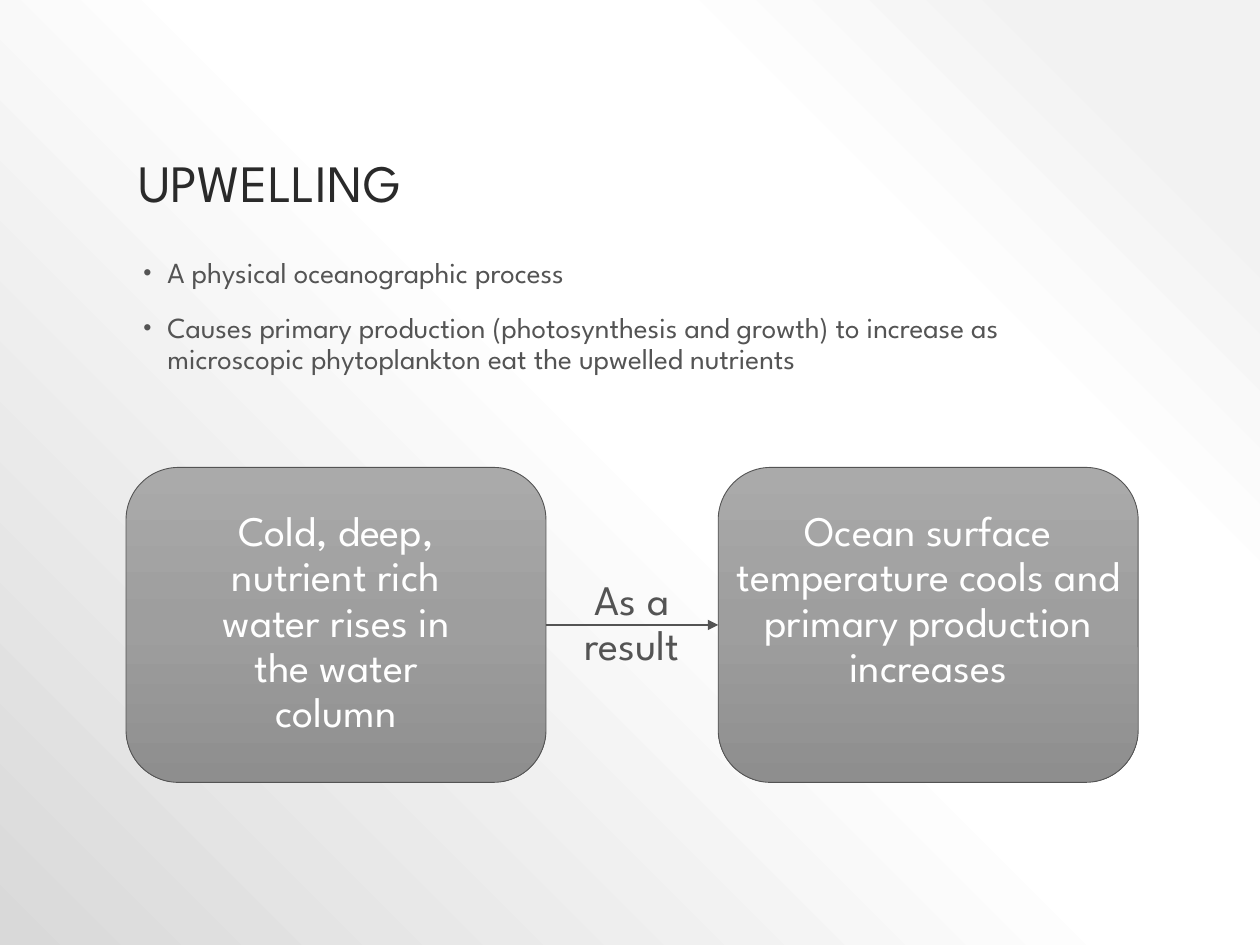
import pptx
import pptx.util
import pptx.dml.color
import pptx.enum.shapes
import pptx.enum.text
import pptx.oxml
import pptx.oxml.ns

FONT = "League Spartan"
DARK, GREY, WHITE = "2A2A2A", "545454", "FFFFFF"
WIDE, HIGH = 10, 7.5

TITLE = "UPWELLING"
POINTS = [
    "A physical oceanographic process",
    "Causes primary production (photosynthesis and growth) to increase as "
    "microscopic phytoplankton eat the upwelled nutrients",
]
LINK = "As a result"
# Text, share of the card's width that the text takes
CARDS = [
    ("Cold, deep, nutrient rich water rises in the water column", 0.65),
    ("Ocean surface temperature cools and primary production increases", 1),
]

BACK = [(10, "F2F2F2"), (28, WHITE), (48, WHITE), (100, "D9D9D9")]
CORNER = '<a:path path="circle"><a:fillToRect l="100000" b="100000"/></a:path>'
CARD = [(0, "AAAAAA"), (50, "9E9E9E"), (100, "8E8E8E")]
DOWN = '<a:lin ang="5400000" scaled="0"/>'

LEFT = WIDE / 10
BOX_W, BOX_H = WIDE / 3, HIGH / 3
TOP, STEP = 3.71, 4.7
MID = TOP + BOX_H / 2
TEXT_H, LINK_W, LINK_H = 1.92, 1.17, 0.83

inch = pptx.util.Inches
ALIGN = pptx.enum.text.PP_ALIGN
ANCHOR = pptx.enum.text.MSO_ANCHOR
FIT = pptx.enum.text.MSO_AUTO_SIZE


def rgb(code):
    return pptx.dml.color.RGBColor.from_string(code)


def node(tag, inner="", **attrs):
    """Make one element of the drawing namespace."""
    extra = "".join(f' {k}="{v}"' for k, v in attrs.items())
    space = pptx.oxml.ns.nsdecls("a")
    return pptx.oxml.parse_xml(f"<a:{tag} {space}{extra}>{inner}</a:{tag}>")


def shade(fill, root, stops, way):
    """Give the fill held in root a gradient with these stops."""
    fill.gradient()
    old = next(root.iter(pptx.oxml.ns.qn("a:gradFill")))
    marks = "".join(
        f'<a:gs pos="{pos * 1000}"><a:srgbClr val="{code}"/></a:gs>'
        for pos, code in stops)
    new = node("gradFill", f"<a:gsLst>{marks}</a:gsLst>{way}", rotWithShape=1)
    old.getparent().replace(old, new)


def write(slide, lines, box, size=24, color=GREY, align=ALIGN.LEFT,
          anchor=ANCHOR.TOP, fit=FIT.NONE, before=0, bullet=False):
    frame = slide.shapes.add_textbox(*map(inch, box)).text_frame
    frame.word_wrap = True
    frame.auto_size = fit
    frame.vertical_anchor = anchor
    for i, line in enumerate(lines):
        para = frame.add_paragraph() if i else frame.paragraphs[0]
        para.alignment = align
        para.line_spacing = 0.9
        para.space_before = pptx.util.Pt(before)
        run = para.add_run()
        run.text = line
        run.font.name = FONT
        run.font.size = pptx.util.Pt(size)
        run.font.color.rgb = rgb(color)
        if bullet:
            props = para._p.get_or_add_pPr()
            props.set("marL", str(inch(0.23)))
            props.set("indent", str(inch(-0.19)))
            props.append(node("buClr", f'<a:srgbClr val="{color}"/>'))
            props.append(node("buSzPct", val=80000))
            props.append(node("buFont", typeface="Arial"))
            props.append(node("buChar", char="•"))


def card(slide, text, share, left):
    shape = slide.shapes.add_shape(
        pptx.enum.shapes.MSO_SHAPE.ROUNDED_RECTANGLE,
        *map(inch, (left, TOP, BOX_W, BOX_H)))
    shape.shadow.inherit = False
    shade(shape.fill, shape._element, CARD, DOWN)
    shape.line.color.rgb = rgb(GREY)
    shape.line.width = pptx.util.Pt(0.5)
    wide = BOX_W * share
    write(slide, [text],
          (left + (BOX_W - wide) / 2, MID - TEXT_H / 2, wide, TEXT_H),
          color=WHITE, align=ALIGN.CENTER, fit=FIT.SHAPE_TO_FIT_TEXT)


def arrow(slide, start, end):
    link = slide.shapes.add_connector(
        pptx.enum.shapes.MSO_CONNECTOR.STRAIGHT,
        *map(inch, (start, MID, end, MID)))
    link.line.color.rgb = rgb(GREY)
    link.line.width = pptx.util.Pt(1)
    link.line._get_or_add_ln().append(node("tailEnd", type="triangle"))
    link._element.spPr.append(node("effectLst"))


def main():
    deck = pptx.Presentation()
    deck.slide_width, deck.slide_height = inch(WIDE), inch(HIGH)
    slide = deck.slides.add_slide(deck.slide_layouts[6])
    shade(slide.background.fill, slide._element, BACK, CORNER)

    write(slide, [TITLE], (LEFT, 0.3, WIDE - 2 * LEFT, 1.45),
          size=30, color=DARK, anchor=ANCHOR.BOTTOM)
    write(slide, POINTS, (LEFT, 2, WIDE - 2 * LEFT, 1.17),
          size=16.6, before=13.5, bullet=True)

    for i, (text, share) in enumerate(CARDS):
        card(slide, text, share, LEFT + i * STEP)
    start, end = LEFT + BOX_W, LEFT + STEP
    arrow(slide, start, end)
    write(slide, [LINK],
          ((start + end - LINK_W) / 2, MID - LINK_H / 2, LINK_W, LINK_H),
          align=ALIGN.CENTER, fit=FIT.SHAPE_TO_FIT_TEXT)
    deck.save("out.pptx")


if __name__ == "__main__":
    main()
